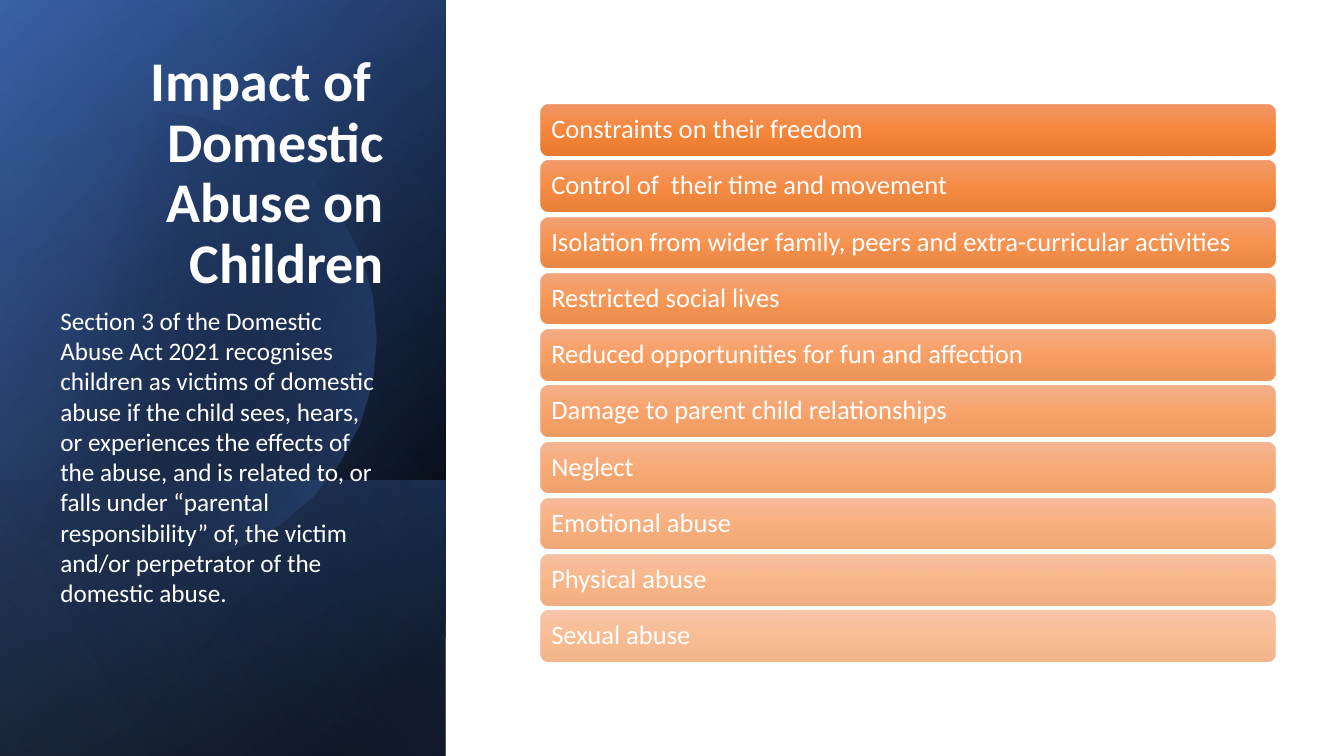
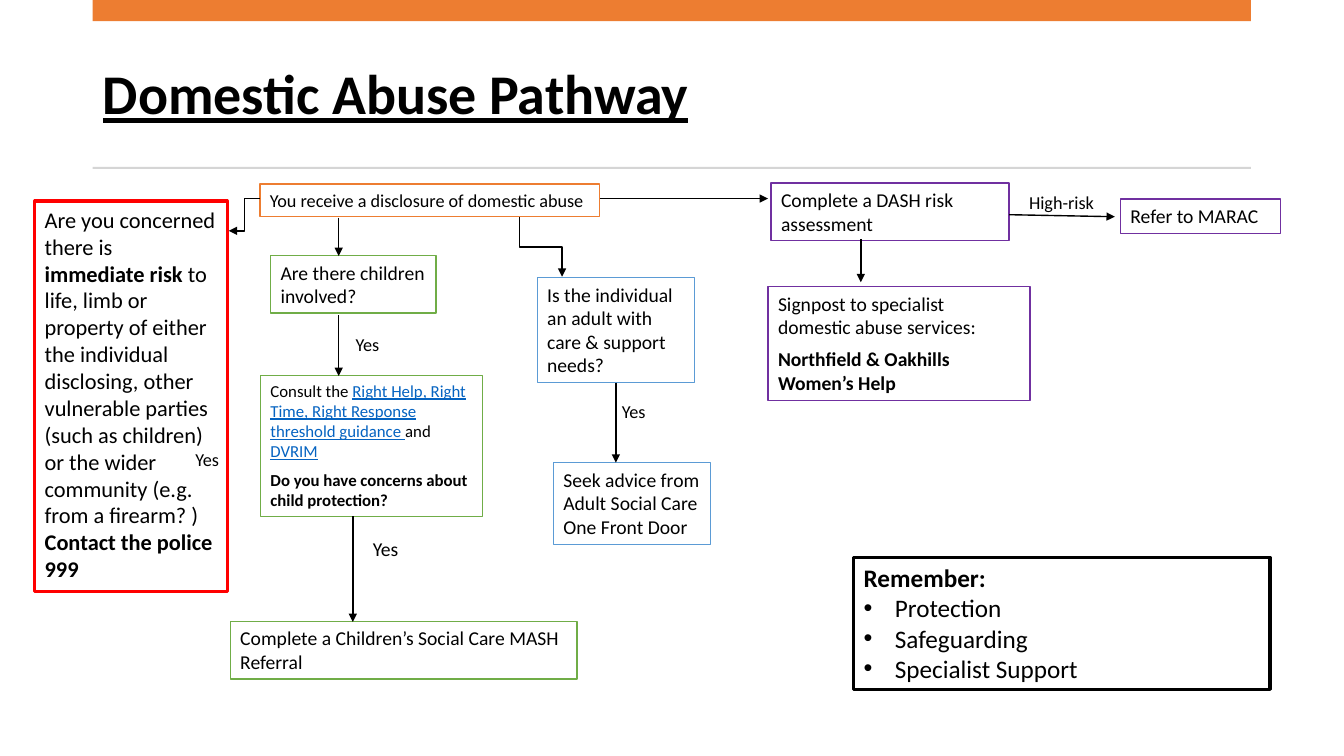
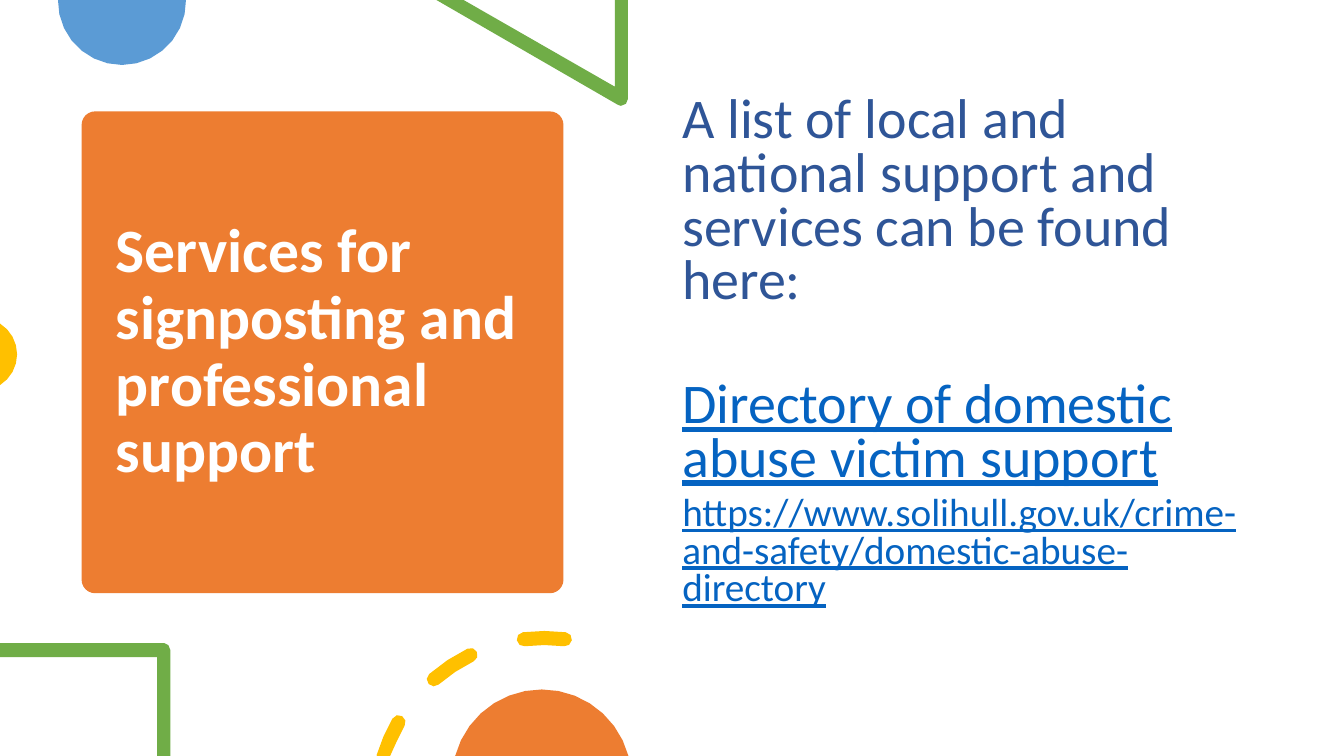
"""Builds three slides on domestic abuse: impact on children, pathway, support services."""
import math

import pptx
import pptx.dml.color
import pptx.enum.shapes
import pptx.enum.text
import pptx.oxml
import pptx.oxml.ns
import pptx.util

ORANGE, GREEN, BLUE, GOLD = "ED7D31", "70AD47", "5B9BD5", "FFC000"
PURPLE, NAVY, SKY, LINK = "7030A0", "2F5597", "4472C4", "0563C1"
BLACK, WHITE, RED, GREY = "000000", "FFFFFF", "FF0000", "D5D5D5"
LEFT, RIGHT = pptx.enum.text.PP_ALIGN.LEFT, pptx.enum.text.PP_ALIGN.RIGHT
ANCHOR = pptx.enum.text.MSO_ANCHOR
RECT = pptx.enum.shapes.MSO_SHAPE.RECTANGLE
ROUND = pptx.enum.shapes.MSO_SHAPE.ROUNDED_RECTANGLE
STRAIGHT = pptx.enum.shapes.MSO_CONNECTOR.STRAIGHT
ELBOW = pptx.enum.shapes.MSO_CONNECTOR.ELBOW
tag = pptx.oxml.ns.qn
space = pptx.oxml.ns.nsdecls("a")
point = pptx.util.Pt
cell = pptx.util.Inches(0.1)
COLS, ROWS = 133.33, 75


def paint(thing, tone, turn=0):
    """Fill a shape, line or font with a hex colour, or a shape with (stop, hex, alpha) steps."""
    if isinstance(tone, str):
        thing.fill.solid()
        thing.fill.fore_color.rgb = pptx.dml.color.RGBColor.from_string(tone)
        return
    stops = "".join(
        f'<a:gs pos="{stop * 1000}"><a:srgbClr val="{shade}"><a:alpha val="{alpha * 1000}"/>'
        f"</a:srgbClr></a:gs>" for stop, shade, alpha in tone)
    thing.fill.background()
    props = thing.element.spPr
    props.replace(props.find(tag("a:noFill")), pptx.oxml.parse_xml(
        f'<a:gradFill {space} rotWithShape="1"><a:gsLst>{stops}</a:gsLst>'
        f'<a:lin ang="{turn * 60000}" scaled="0"/></a:gradFill>'))


def write(shape, paras, size, tone=BLACK, anchor=ANCHOR.TOP, **look):
    """Write paragraphs of (text, marks) runs; marks are b bold, u underlined, l link style."""
    frame = shape.text_frame
    frame.word_wrap = True
    frame.auto_size = pptx.enum.text.MSO_AUTO_SIZE.NONE
    frame.vertical_anchor = anchor
    for num, runs in enumerate(paras):
        para = frame.add_paragraph() if num else frame.paragraphs[0]
        for key, val in ({"alignment": LEFT} | look).items():
            setattr(para, key, val)
        for text, marks in runs:
            run = para.add_run()
            run.text = text
            style = {"name": "Calibri", "size": point(size), "bold": "b" in marks,
                     "underline": "u" in marks or "l" in marks}
            for key, val in style.items():
                setattr(run.font, key, val)
            paint(run.font, LINK if "l" in marks else tone)


deck = pptx.Presentation()
deck.slide_width, deck.slide_height = round(COLS * cell), ROWS * cell

titles = [
    ("Impact of  Domestic Abuse on Children", (5, 3.6, 34.1, 26.2), 40, WHITE, "b", RIGHT,
     ANCHOR.BOTTOM),
    ("Domestic Abuse Pathway", (9.2, 3.7, 114.9, 11.8), 40, BLACK, "bu", LEFT, ANCHOR.MIDDLE),
    ("Services for signposting and professional support", (10.5, 12.2, 43.1, 45.6), 44, WHITE,
     "b", LEFT, ANCHOR.MIDDLE),
]
for text, spot, size, tone, marks, align, anchor in titles:
    title = deck.slides.add_slide(deck.slide_layouts[5]).shapes.title
    for key, val in zip(("left", "top", "width", "height"), spot):
        setattr(title, key, round(val * cell))
    write(title, [[(text, marks)]], size, tone, anchor, alignment=align, line_spacing=0.9)
impact, pathway, support = deck.slides

panel = (-15.4, 15.4, 75, 44.2)
layers = [
    (panel, [(8, BLACK, 100), (100, NAVY, 100)], 50),
    (panel, [(0, BLACK, 0), (99, SKY, 46)], 30),
    ((8.4, 39.25, 27.4, 44.2), [(2, SKY, 29), (100, BLACK, 30)], 130),
    (panel, [(0, BLACK, 0), (99, "8FAADC", 11)], 120),
]
for spot, tone, turn in layers:
    layer = impact.shapes.add_shape(RECT, *(round(n * cell) for n in spot))
    layer.shadow.inherit = False
    layer.line.fill.background()
    layer.rotation = 90
    layer.element.spPr.find(tag("a:xfrm")).set("flipH", "1")
    paint(layer, tone, turn)

forms = [
    (support, GREEN, 0, [[(43.3, 0), (61.3, 10.4), (61.6, 10.5), (62.1, 10.3), (62.3, 9.8),
                          (62.3, 0), (61, 0), (61, 8.6), (46, 0)]]),
    (support, GREEN, 0, [[(0, 63.8), (16.3, 63.8), (16.7, 64), (16.9, 64.5), (16.9, 75),
                          (15.6, 75), (15.6, 65.2), (0, 65.2)]]),
]
discs = [
    (impact, 14.8, 33.6, 22.5, -131, 131, 24,
     [(29, BLACK, 0), (100, SKY, 43)], 14),
    (support, 12.1, 0.1, 6.35, -1, 181, 14, BLUE, 0),
    (support, -1.9, 35.15, 3.6, -58, 58, 8, GOLD, 0),
    (support, 53.75, 77.3, 8.9, 195, 345, 14, ORANGE, 0),
]
for slide, mid, deep, size, start, stop, steps, tone, turn in discs:
    turns = [math.radians(start + (stop - start) * num / steps) for num in range(steps + 1)]
    forms.append((slide, tone, turn, [[(mid + size * math.cos(a), deep + size * math.sin(a))
                                       for a in turns]]))
dashes = []
for low, high in ((83, 97), (116, 131), (150, 163)):
    mid = (low + high) / 2
    rim = [(17.4, low), (17.4, mid), (17.4, high), (17.2, high + 1.7), (16.7, high + 2.4),
           (16.2, high + 1.7), (16, high), (16, mid), (16, low), (16.2, low - 1.7),
           (16.7, low - 2.4), (17.2, low - 1.7)]
    dashes.append([(54 + far * math.cos(math.radians(a)), 80 - far * math.sin(math.radians(a)))
                   for far, a in rim])
forms.append((support, GOLD, 0, dashes))

for slide, tone, turn, loops in forms:
    pen = None
    for loop in loops:
        dots = [(round(max(0, x) * cell), round(min(max(0, y), ROWS) * cell)) for x, y in loop]
        if pen:
            pen.move_to(*dots[0])
        else:
            pen = slide.shapes.build_freeform(*dots[0])
        pen.add_line_segments(dots[1:], close=True)
    form = pen.convert_to_shape()
    form.shadow.inherit = False
    form.line.fill.background()
    paint(form, tone, turn)

body = impact.shapes.add_textbox(*(round(n * cell) for n in (5, 29.8, 34.1, 31.3)))
write(body, [[(
    "Section 3 of the Domestic Abuse Act 2021 recognises children as victims of domestic abuse "
    "if the child sees, hears, or experiences the effects of the abuse, and is related to, or "
    "falls under “parental responsibility” of, the victim and/or perpetrator of the domestic "
    "abuse.", "")]], 18, WHITE, space_after=point(6))

harms = [
    "Constraints on their freedom", "Control of  their time and movement",
    "Isolation from wider family, peers and extra-curricular activities",
    "Restricted social lives", "Reduced opportunities for fun and affection",
    "Damage to parent child relationships", "Neglect", "Emotional abuse", "Physical abuse",
    "Sexual abuse",
]
for num, harm in enumerate(harms):
    spot = (53.6, 10.4 + 5.58 * num, 72.9, 5)
    bar = impact.shapes.add_shape(ROUND, *(round(n * cell) for n in spot))
    bar.shadow.inherit = False
    bar.line.fill.background()
    alpha = round(90 - 40 * num / 9)
    paint(bar, [(0, "F18C57", alpha), (50, "F67B28", alpha), (100, "E56C19", alpha)], 90)
    write(bar, [[(harm, "")]], 19, WHITE, ANCHOR.MIDDLE, line_spacing=0.9)
    bar.text_frame.margin_left = round(0.85 * cell)

blocks = [
    (pathway, RECT, (9.2, 0, 114.9, 2.1), ORANGE),
    (pathway, RECT, (9.2, 16.55, 114.9, 0.2), GREY),
    (support, ROUND, (8.1, 11.05, 47.8, 47.8), ORANGE),
]
for slide, kind, spot, tone in blocks:
    block = slide.shapes.add_shape(kind, *(round(n * cell) for n in spot))
    block.shadow.inherit = False
    block.line.fill.background()
    paint(block, tone)
block.adjustments[0] = 0.028

nodes = [
    ("start", (25.8, 18.25, 33.7, 3.2), ORANGE, 1, 13,
     [[("You receive a disclosure of domestic abuse", "")]]),
    ("risk", (3.45, 19.95, 19.1, 38.7), RED, 2.25, 16,
     [[("Are you concerned there is ", ""), ("immediate risk ", "b"),
       ("to life, limb or property of either the individual disclosing, other vulnerable "
        "parties (such as children) or the wider community (e.g. from a firearm? ) ", ""),
       ("Contact the police 999", "b")]]),
    ("child", (26.85, 25.35, 16.4, 5.7), GREEN, 1, 14, [[("Are there children involved?", "")]]),
    ("signpost", (76.2, 28.45, 26, 11.3), PURPLE, 1, 14,
     [[("Signpost to specialist domestic abuse services:", "")],
      [("Northfield & Oakhills Women’s Help", "b")]]),
    ("consult", (25.85, 37.25, 22, 14), GREEN, 1, 12,
     [[("Consult the ", ""),
       ("Right Help, Right Time, Right Response threshold guidance ", "l"),
       ("and ", ""), ("DVRIM", "l")],
      [("Do you have concerns about child protection?", "b")]]),
    ("refer", (22.85, 61.65, 34.4, 5.7), GREEN, 1, 14,
     [[("Complete a Children’s Social Care MASH Referral", "")]]),
    ("adult", (53.3, 27.55, 15.6, 10.4), BLUE, 1, 14,
     [[("Is the individual an adult with care & support needs?", "")]]),
    ("advice", (54.9, 45.9, 15.6, 8.1), BLUE, 1, 14,
     [[("Seek advice from Adult Social Care One Front Door", "")]]),
    ("dash", (76.5, 18.15, 23.6, 5.7), PURPLE, 1, 14,
     [[("Complete a DASH risk assessment", "")]]),
    ("marac", (111.15, 19.75, 15.9, 3.4), PURPLE, 1, 14, [[("Refer to MARAC", "")]]),
]
boxes = {}
for name, spot, tone, weight, size, paras in nodes:
    box = pathway.shapes.add_shape(RECT, *(round(n * cell) for n in spot))
    box.shadow.inherit = False
    box.fill.background()
    paint(box.line, tone)
    box.line.width = point(weight)
    write(box, paras, size, space_after=point(6))
    boxes[name] = box

arrows = [
    (ELBOW, (25.8, 19.7, 22.7, 22.9), 0, None, 0),
    (ELBOW, (56.6, 22.4, 50.7, 26.6), 270, None, 0),
    (STRAIGHT, (59.5, 19.7, 76.2, 19.7), 0, None, 0),
    (STRAIGHT, (33.6, 21.6, 33.6, 25.4), 0, None, 0),
    (STRAIGHT, (33.6, 31.3, 33.6, 37.3), 0, None, 0),
    (STRAIGHT, (61.1, 38, 61.1, 45.9), 0, "adult", 2),
    (STRAIGHT, (85.4, 23.7, 85.4, 28), 0, None, 0),
    (STRAIGHT, (100.1, 21.3, 110.6, 21.5), 0, None, 0),
    (STRAIGHT, (35, 51.2, 35, 61.7), 0, None, 0),
]
for kind, ends, turn, name, side in arrows:
    arrow = pathway.shapes.add_connector(kind, *(round(n * cell) for n in ends))
    if name:
        arrow.begin_connect(boxes[name], side)
    paint(arrow.line, BLACK)
    arrow.line.width = point(1)
    props = arrow.element.spPr
    if turn:
        props.find(tag("a:xfrm")).set("rot", str(turn * 60000))
    props.find(tag("a:ln")).append(pptx.oxml.parse_xml(f'<a:tailEnd {space} type="triangle"/>'))
    props.append(pptx.oxml.parse_xml(f"<a:effectLst {space}/>"))

labels = [
    ("Yes", (34.3, 32.6, 4.7, 3.2), 13),
    ("Yes", (18.4, 44, 4.5, 3.2), 13),
    ("Yes", (60.7, 39.25, 6, 3.2), 13),
    ("High-risk", (101.1, 18.5, 9.8, 3.2), 13),
    ("Yes", (36, 52.8, 5.9, 3.4), 14),
]
for text, spot, size in labels:
    label = pathway.shapes.add_textbox(*(round(n * cell) for n in spot))
    write(label, [[(text, "")]], size)

recall = pathway.shapes.add_shape(RECT, *(round(n * cell) for n in (84.7, 55.3, 41.3, 13.1)))
recall.shadow.inherit = False
recall.fill.background()
paint(recall.line, BLACK)
recall.line.width = point(2.25)
write(recall, [[("Remember:", "b")], [("Protection", "")], [("Safeguarding", "")],
               [("Specialist Support", "")]], 18)
for props in list(recall.element.iter(tag("a:pPr")))[1:]:
    for key, val in {"marL": 3.1, "indent": -3.1}.items():
        props.set(key, str(round(val * cell)))
    props.append(pptx.oxml.parse_xml(f'<a:buFont {space} typeface="Arial"/>'))
    props.append(pptx.oxml.parse_xml(f'<a:buChar {space} char="•"/>'))

guide = support.shapes.add_textbox(*(round(n * cell) for n in (66.7, 9, 57.5, 53.5)))
write(guide, [
    [("A list of local and national support and services can be found here:", "")],
    [("Directory of domestic abuse victim support", "l")],
    [("https://www.solihull.gov.uk/crime-and-safety/domestic-abuse-directory", "l")],
], 40, NAVY, line_spacing=0.8, space_after=point(6))
lead, name, site = guide.text_frame.paragraphs
name.space_before = point(44)
site.runs[0].font.size = point(28)

for slide in deck.slides:
    title = slide.shapes.title.element
    title.getparent().append(title)

deck.save("out.pptx")
